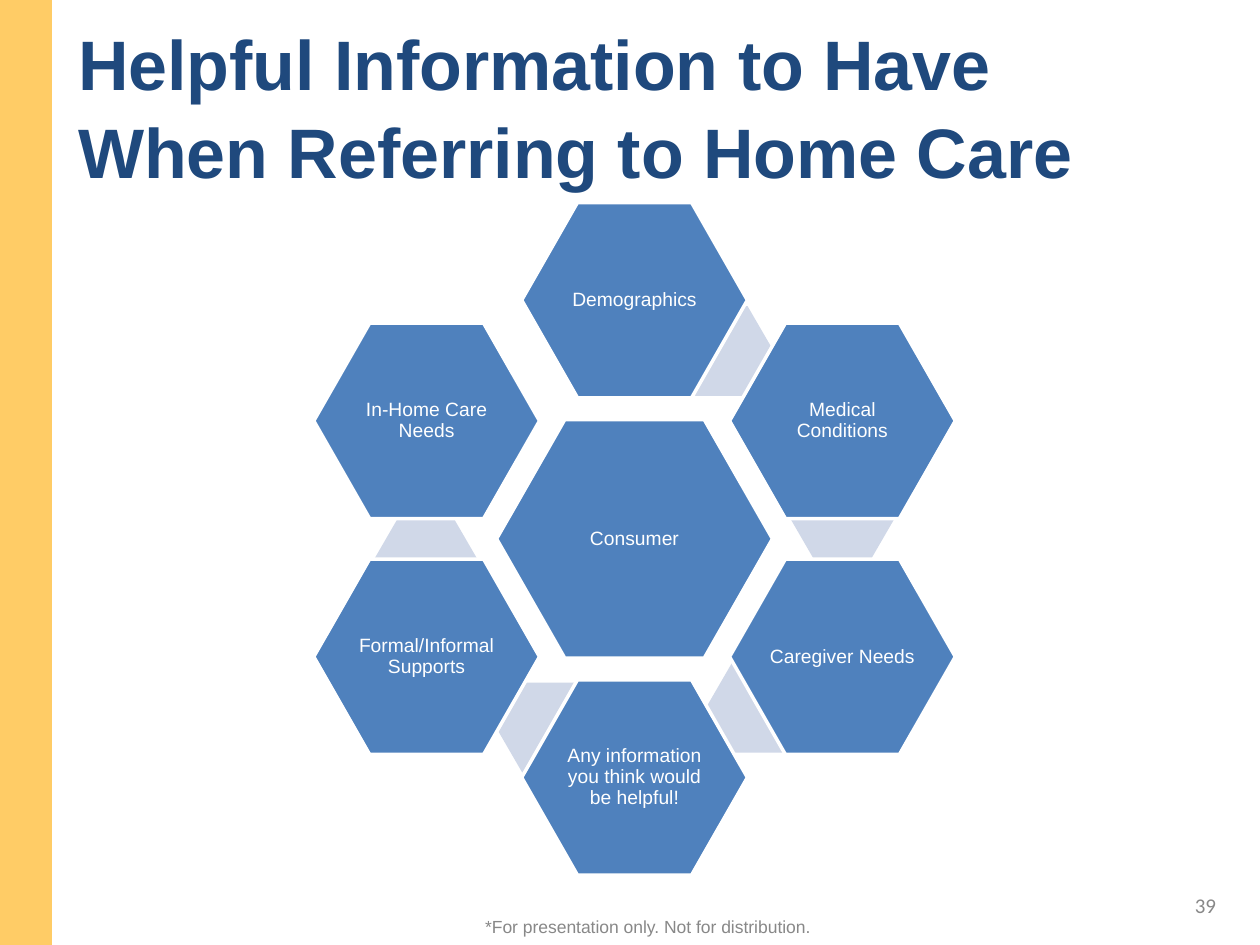
from dataclasses import dataclass

from pptx import Presentation
from pptx.dml.color import RGBColor
from pptx.enum import shapes, text
from pptx.util import Pt


@dataclass(frozen=True)
class Theme:
    bar: str = "FFCC66"
    title: str = "1F497D"
    hexagon: str = "4F81BD"
    link: str = "D0D8E8"
    light: str = "FFFFFF"
    muted: str = "888888"
    font: str = "Arial"
    number_font: str = "Calibri"
    title_size: float = 40
    label_size: float = 11
    number_size: float = 12
    footer_size: float = 10


class SlideBuilder:
    def __init__(self, prs, theme):
        self.theme = theme
        self.slide = prs.slides.add_slide(prs.slide_layouts[5])

    def set_text(self, sp, content, size, color, align, anchor, font=None, bold=False, spacing=1.0):
        tf = sp.text_frame
        tf.text = content
        tf.word_wrap = True
        tf.auto_size = text.MSO_AUTO_SIZE.NONE
        tf.vertical_anchor = anchor
        p = tf.paragraphs[0]
        p.alignment = align
        p.line_spacing = spacing
        r = p.runs[0]
        r.font.name = font or self.theme.font
        r.font.size = Pt(size)
        r.font.bold = bold
        r.font.color.rgb = RGBColor.from_string(color)
        return tf

    def title(self, content, left, top, width, height):
        sp = self.slide.shapes.title
        sp.left, sp.top, sp.width, sp.height = map(Pt, (left, top, width, height))
        self.set_text(sp, content, self.theme.title_size, self.theme.title,
                      text.PP_ALIGN.LEFT, text.MSO_ANCHOR.TOP, bold=True, spacing=1.05)

    def shape(self, kind, left, top, width, height, fill):
        sp = self.slide.shapes.add_shape(kind, *map(Pt, (left, top, width, height)))
        sp.shadow.inherit = False
        sp.fill.solid()
        sp.fill.fore_color.rgb = RGBColor.from_string(fill)
        sp.line.fill.background()
        return sp

    def bar(self, width, height):
        self.shape(shapes.MSO_SHAPE.RECTANGLE, 0, 0, width, height, self.theme.bar)

    def hexagon(self, x, y, width, height, fill, inset=0.29):
        sp = self.shape(shapes.MSO_SHAPE.HEXAGON, x - width / 2, y - height / 2,
                        width, height, fill)
        sp.adjustments[0] = inset
        sp.adjustments[1] = 1.155
        return sp

    def node(self, content, x, y, width, height):
        sp = self.hexagon(x, y, width, height, self.theme.hexagon, 0.286)
        sp.line.color.rgb = RGBColor.from_string(self.theme.light)
        sp.line.width = Pt(2)
        tf = self.set_text(sp, content, self.theme.label_size, self.theme.light,
                           text.PP_ALIGN.CENTER, text.MSO_ANCHOR.MIDDLE, spacing=0.9)
        tf.margin_left = tf.margin_right = tf.margin_top = tf.margin_bottom = Pt(1.1)

    def label(self, content, left, top, width, height, size, align, font):
        sp = self.slide.shapes.add_textbox(*map(Pt, (left, top, width, height)))
        self.set_text(sp, content, size, self.theme.muted, align, text.MSO_ANCHOR.MIDDLE, font)


def main():
    prs = Presentation()
    prs.slide_width, prs.slide_height = Pt(720), Pt(540)
    theme = Theme()
    s = SlideBuilder(prs, theme)

    s.bar(29.7, 540)
    s.title("Helpful Information to Have When Referring to Home Care", 37.4, 5.8, 639.4, 104.4)

    center_x, center_y = 362.6, 307.9
    side_x, side_y, end_y = 118.8, 67.4, 136.4
    links = [(49.7, -107.3), (118.8, -11.5), (70.6, 96.5), (-49.3, 107.9), (-119.3, 12.1)]
    nodes = [
        ("Demographics", 0, -end_y),
        ("Medical Conditions", side_x, -side_y),
        ("Caregiver Needs", side_x, side_y),
        ("Any information you think would be helpful!", 0, end_y),
        ("Formal/Informal Supports", -side_x, side_y),
        ("In-Home Care Needs", -side_x, -side_y),
    ]

    for dx, dy in links:
        s.hexagon(center_x + dx, center_y + dy, 59.5, 51.3, theme.link)
    s.node("Consumer", center_x, center_y, 157.7, 136.2)
    for content, dx, dy in nodes:
        s.node(content, center_x + dx, center_y + dy, 129, 111.6)

    s.label("39", 581.8, 504.7, 120.2, 24.5, theme.number_size,
            text.PP_ALIGN.RIGHT, theme.number_font)
    s.label("*For presentation only. Not for distribution.", 248.4, 514.8, 243.4, 28.8,
            theme.footer_size, text.PP_ALIGN.CENTER, theme.font)

    prs.save("out.pptx")


if __name__ == "__main__":
    main()
